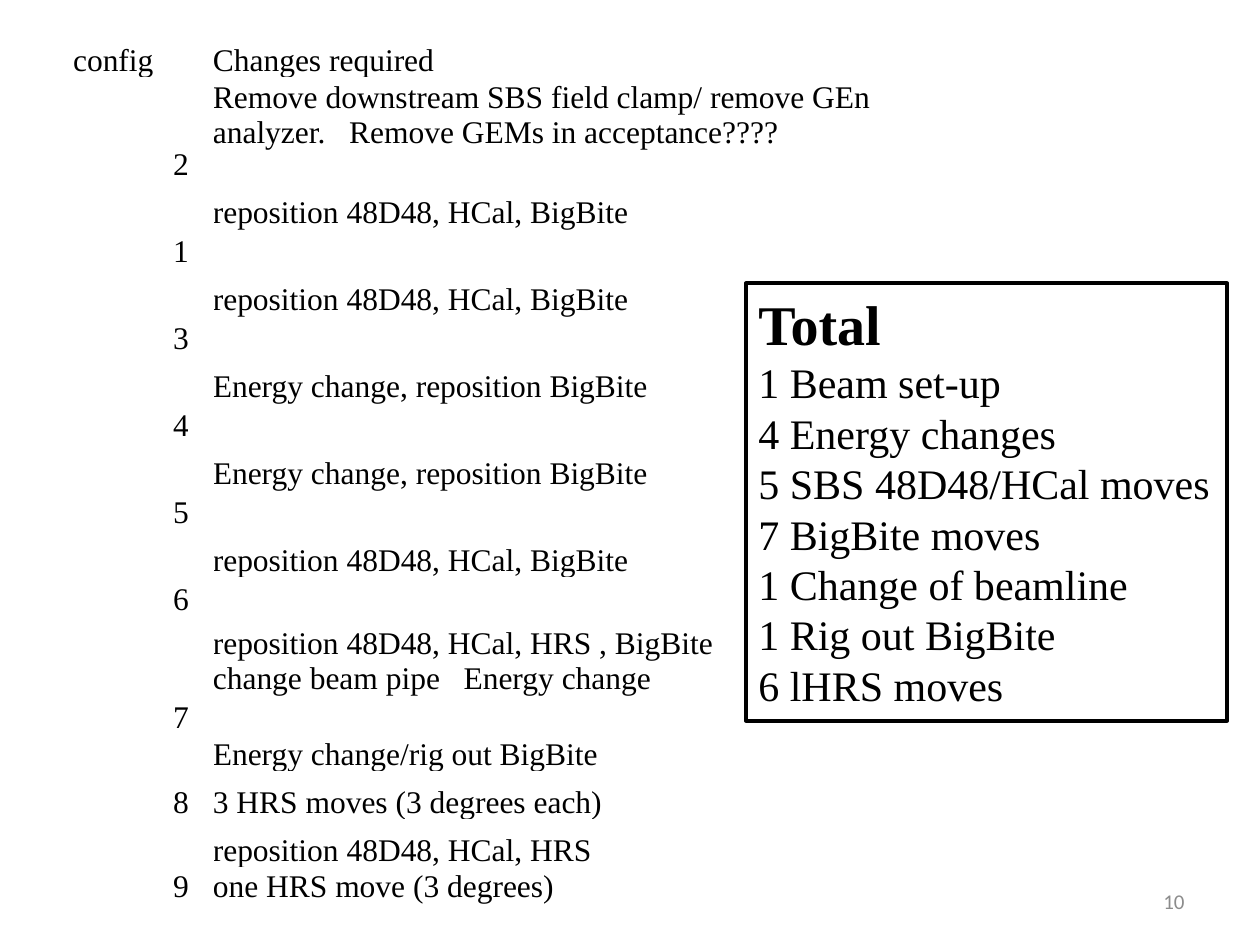
from lxml import etree
from pptx import Presentation
from pptx.dml.color import RGBColor
from pptx.enum.shapes import MSO_SHAPE
from pptx.enum.text import MSO_ANCHOR, PP_ALIGN
from pptx.oxml.ns import qn
from pptx.util import Inches, Pt

LEFT, RIGHT = PP_ALIGN.LEFT, PP_ALIGN.RIGHT
BOTTOM, MIDDLE, TOP = MSO_ANCHOR.BOTTOM, MSO_ANCHOR.MIDDLE, MSO_ANCHOR.TOP
RECTANGLE = MSO_SHAPE.RECTANGLE
COLORS = {"ink": "000000", "page": "8C8C8C"}
SERIF = "Times New Roman"

# Content: (config, changes required, row height)
SBS_MOVE = "reposition 48D48, HCal, BigBite"
ENERGY_MOVE = "Energy change, reposition BigBite"
NUMBER_ROW, CHANGE_ROW, LINE_ROW = 0.31, 0.38, 0.29
CHANGES = [
    ("config", "Changes required", LINE_ROW),
    ("2", "Remove downstream SBS field clamp/ remove GEn analyzer.   "
          "Remove GEMs in acceptance????", 0.83),
    ("", SBS_MOVE, CHANGE_ROW),
    ("1", "", NUMBER_ROW),
    ("", SBS_MOVE, CHANGE_ROW),
    ("3", "", NUMBER_ROW),
    ("", ENERGY_MOVE, CHANGE_ROW),
    ("4", "", NUMBER_ROW),
    ("", ENERGY_MOVE, CHANGE_ROW),
    ("5", "", NUMBER_ROW),
    ("", SBS_MOVE, CHANGE_ROW),
    ("6", "", NUMBER_ROW),
    ("", "reposition 48D48, HCal, HRS , BigBite\n"
         "change beam pipe   Energy change", 0.63),
    ("7", "", NUMBER_ROW),
    ("", "Energy change/rig out BigBite", LINE_ROW),
    ("8", "3 HRS moves (3 degrees each)", CHANGE_ROW),
    ("", "reposition 48D48, HCal, HRS", CHANGE_ROW),
    ("9", "one HRS move (3 degrees)", LINE_ROW),
]
COLUMN_WIDTHS = [0.08, 0.92, 0.19, 5.65]
RAISED_ROW, RAISED_BY = 1, 0.26  # the change sits above its config number
TOTALS = ["1 Beam set-up", "4 Energy changes", "5 SBS 48D48/HCal moves",
          "7 BigBite moves", "1 Change of beamline", "1 Rig out BigBite",
          "6 lHRS moves"]
PAGE = "10"


def write(frame, lines, size, font=SERIF, color="ink", align=LEFT):
    for index, line in enumerate(lines):
        paragraph = frame.paragraphs[0] if index == 0 else frame.add_paragraph()
        paragraph.alignment = align
        run = paragraph.add_run()
        run.text = line
        run.font.name, run.font.size = font, Pt(size)
        run.font.color.rgb = RGBColor.from_string(COLORS[color])


def fill_cell(cell, text, align):
    cell.fill.background()
    cell.vertical_anchor = BOTTOM
    for side in ("left", "right", "top", "bottom"):
        setattr(cell, f"margin_{side}", 0)
    if text:
        write(cell.text_frame, text.split("\n"), 18, align=align)
    else:  # keep empty cells from stretching their row
        end = etree.SubElement(cell.text_frame.paragraphs[0]._p, qn("a:endParaRPr"))
        end.set("sz", "1000")


prs = Presentation()
prs.slide_width, prs.slide_height = Inches(10), Inches(7.5)
slide = prs.slides.add_slide(prs.slide_layouts[6])

# Table of configuration changes
heights = [height for _, _, height in CHANGES]
table = slide.shapes.add_table(
    len(CHANGES), len(COLUMN_WIDTHS), Inches(0.5), Inches(0.33),
    Inches(sum(COLUMN_WIDTHS)), Inches(sum(heights))).table
table.first_row = table.horz_banding = False
for column, width in zip(table.columns, COLUMN_WIDTHS):
    column.width = Inches(width)
for r, (config, change, height) in enumerate(CHANGES):
    table.rows[r].height = Inches(height)
    for c, text in enumerate(["", config, "", change]):
        fill_cell(table.cell(r, c), text, RIGHT if text.isdigit() else LEFT)
table.cell(RAISED_ROW, 3).margin_bottom = Inches(RAISED_BY)

# Box of totals
box = slide.shapes.add_shape(RECTANGLE, Inches(5.92), Inches(2.25),
                             Inches(3.82), Inches(3.47))
box.shadow.inherit = False
box.fill.background()
box.line.color.rgb = RGBColor.from_string(COLORS["ink"])
box.line.width = Pt(2.25)
totals = box.text_frame
totals.word_wrap = False
totals.vertical_anchor = TOP
write(totals, ["Total"] + TOTALS, 24)
heading = totals.paragraphs[0].runs[0].font
heading.size, heading.bold = Pt(32), True

# Page number
page = slide.shapes.add_textbox(Inches(7.17), Inches(6.95),
                                Inches(2.33), Inches(0.4)).text_frame
page.word_wrap = True
page.vertical_anchor = MIDDLE
write(page, [PAGE], 12, "Calibri", "page", RIGHT)

prs.save("out.pptx")
